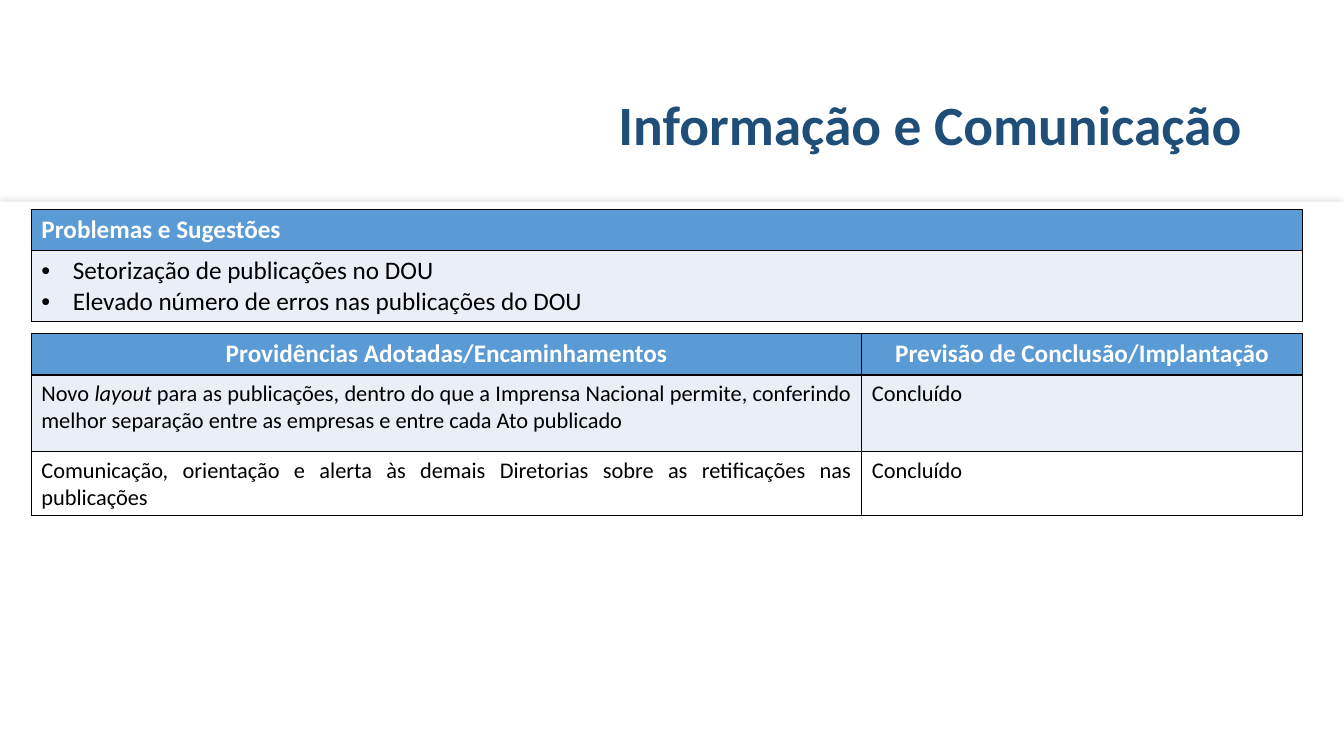
import pptx
import pptx.dml.color
import pptx.enum.shapes
import pptx.enum.text
import pptx.oxml
import pptx.oxml.ns
import pptx.util
from lxml import etree

Cm = pptx.util.Cm
Pt = pptx.util.Pt
ALIGN = pptx.enum.text.PP_ALIGN
ANCHOR = pptx.enum.text.MSO_ANCHOR


def color(hex_value):
    return pptx.dml.color.RGBColor.from_string(hex_value)


def drawing_xml(body):
    return pptx.oxml.parse_xml(body.replace(" ", f' {pptx.oxml.ns.nsdecls("a")} ', 1))


class Deck:
    font = "Calibri"
    navy, blue, pale = "1F4E79", "5B9BD5", "EAEFF7"
    white, black = "FFFFFF", "000000"

    def __init__(self, width, height):
        self.presentation = pptx.Presentation()
        self.presentation.slide_width = Cm(width)
        self.presentation.slide_height = Cm(height)
        self.slide = self.presentation.slides.add_slide(self.presentation.slide_layouts[6])

    def style(self, paragraph, size, hex_value, bold=False, align=ALIGN.LEFT):
        paragraph.alignment = align
        for run in paragraph.runs:
            run.font.name = self.font
            run.font.size = Pt(size)
            run.font.bold = bold
            run.font.color.rgb = color(hex_value)

    def panel(self, left, top, width, height):
        panel = self.slide.shapes.add_shape(
            pptx.enum.shapes.MSO_SHAPE.RECTANGLE, Cm(left), Cm(top), Cm(width), Cm(height))
        panel.fill.solid()
        panel.fill.fore_color.rgb = color(self.white)
        panel.line.fill.background()
        panel.shadow.inherit = False
        effects = panel._element.spPr.find(pptx.oxml.ns.qn("a:effectLst"))
        effects.append(drawing_xml(
            f'<a:outerShdw blurRad="{Pt(5)}" dist="0" algn="ctr" rotWithShape="0">'
            '<a:srgbClr val="A6A6A6"><a:alpha val="42000"/></a:srgbClr></a:outerShdw>'))

    def title(self, text, left, top, width, height):
        frame = self.slide.shapes.add_textbox(Cm(left), Cm(top), Cm(width), Cm(height)).text_frame
        frame.word_wrap = True
        frame.vertical_anchor = ANCHOR.MIDDLE
        heading = frame.paragraphs[0]
        heading.text = text
        heading.line_spacing = 0.9
        self.style(heading, 39.6, self.navy, True, ALIGN.RIGHT)

    def bullet(self, paragraph):
        properties = paragraph._p.get_or_add_pPr()
        properties.set("marL", str(Cm(0.79)))
        properties.set("indent", str(-Cm(0.79)))
        properties.append(drawing_xml('<a:buFont typeface="Arial"/>'))
        properties.append(drawing_xml('<a:buChar char="•"/>'))

    def borders(self, cell):
        properties = cell._tc.get_or_add_tcPr()
        for position, side in enumerate("LRTB"):
            properties.insert(position, drawing_xml(
                f'<a:ln{side} w="{Pt(1)}"><a:solidFill><a:srgbClr val="{self.black}"/>'
                f'</a:solidFill></a:ln{side}>'))

    def table(self, rows, left, top, widths, heights, size, header_align, body_align, bullets=False):
        table = self.slide.shapes.add_table(
            len(rows), len(widths), Cm(left), Cm(top), Cm(sum(widths)), Cm(sum(heights))).table
        for column, width in zip(table.columns, widths):
            column.width = Cm(width)
        for index, (row, height, texts) in enumerate(zip(table.rows, heights, rows)):
            row.height = Cm(height)
            header = index == 0
            fill = self.blue if header else (self.pale if index % 2 else self.white)
            for cell, text in zip(row.cells, texts):
                cell.text_frame.text = text
                cell.fill.solid()
                cell.fill.fore_color.rgb = color(fill)
                self.borders(cell)
                for paragraph in cell.text_frame.paragraphs:
                    if bullets and not header:
                        self.bullet(paragraph)
                    if header:
                        self.style(paragraph, 18, self.white, True, header_align)
                    else:
                        self.style(paragraph, size, self.black, align=body_align)
        return table

    def italicize(self, paragraph, word):
        before, after = paragraph.text.split(word)
        size = paragraph.runs[0].font.size.pt
        paragraph.text = before
        for text in (word, after):
            paragraph.add_run().text = text
        self.style(paragraph, size, self.black, align=paragraph.alignment)
        paragraph.runs[1].font.italic = True


def main():
    deck = Deck(33.87, 19.05)
    deck.panel(0, 5.08, 33.87, 13.97)
    deck.title("Informação e Comunicação", 2.34, 1.55, 29.21, 3.35)
    deck.table(
        [["Problemas e Sugestões"],
         ["Setorização de publicações no DOU\nElevado número de erros nas publicações do DOU"]],
        0.79, 5.28, [32.03], [1.04, 1.78], 18, ALIGN.LEFT, ALIGN.LEFT, bullets=True)
    actions = deck.table(
        [["Providências Adotadas/Encaminhamentos", "Previsão de Conclusão/Implantação"],
         ["Novo layout para as publicações, dentro do que a Imprensa Nacional permite, "
          "conferindo melhor separação entre as empresas e entre cada Ato publicado", "Concluído"],
         ["Comunicação, orientação e alerta às demais Diretorias sobre as retificações "
          "nas publicações", "Concluído"]],
        0.79, 8.41, [20.93, 11.1], [1.04, 1.93, 1.6], 16, ALIGN.CENTER, ALIGN.JUSTIFY)
    deck.italicize(actions.cell(1, 0).text_frame.paragraphs[0], "layout")
    deck.presentation.save("out.pptx")


if __name__ == "__main__":
    main()
